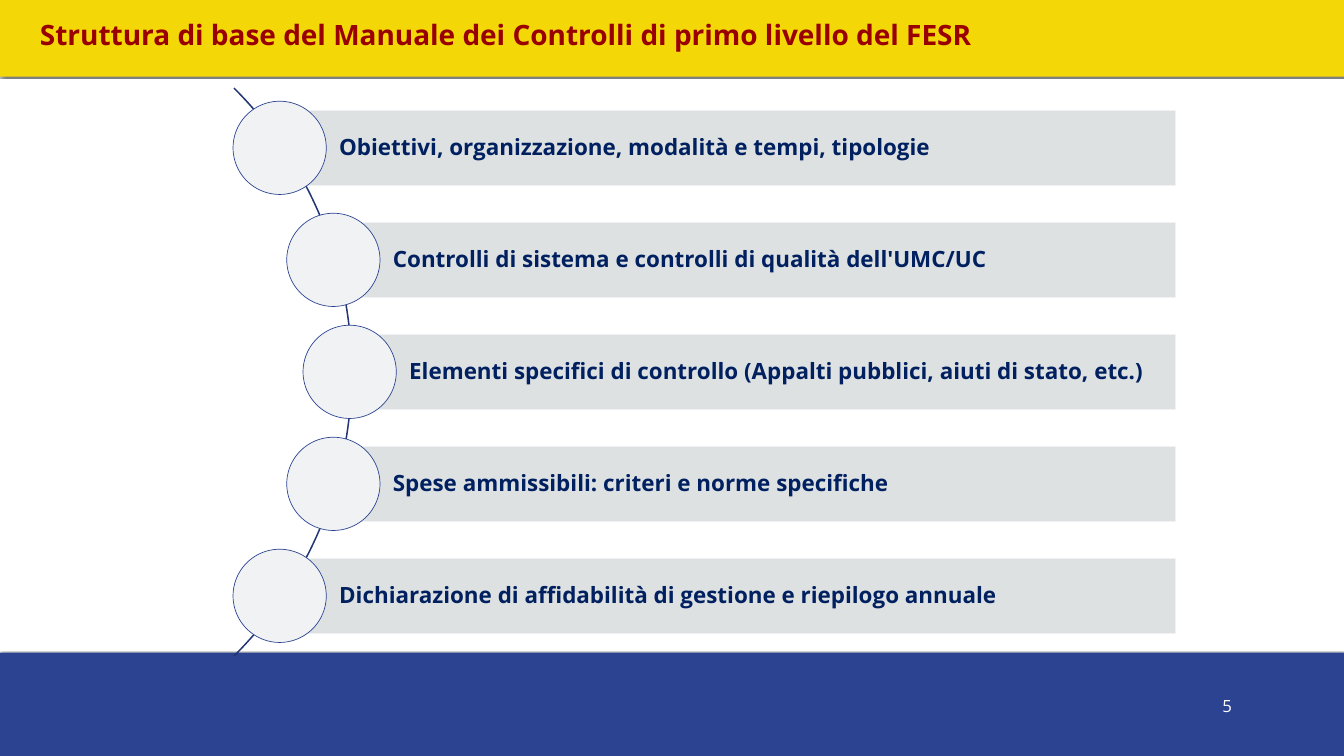
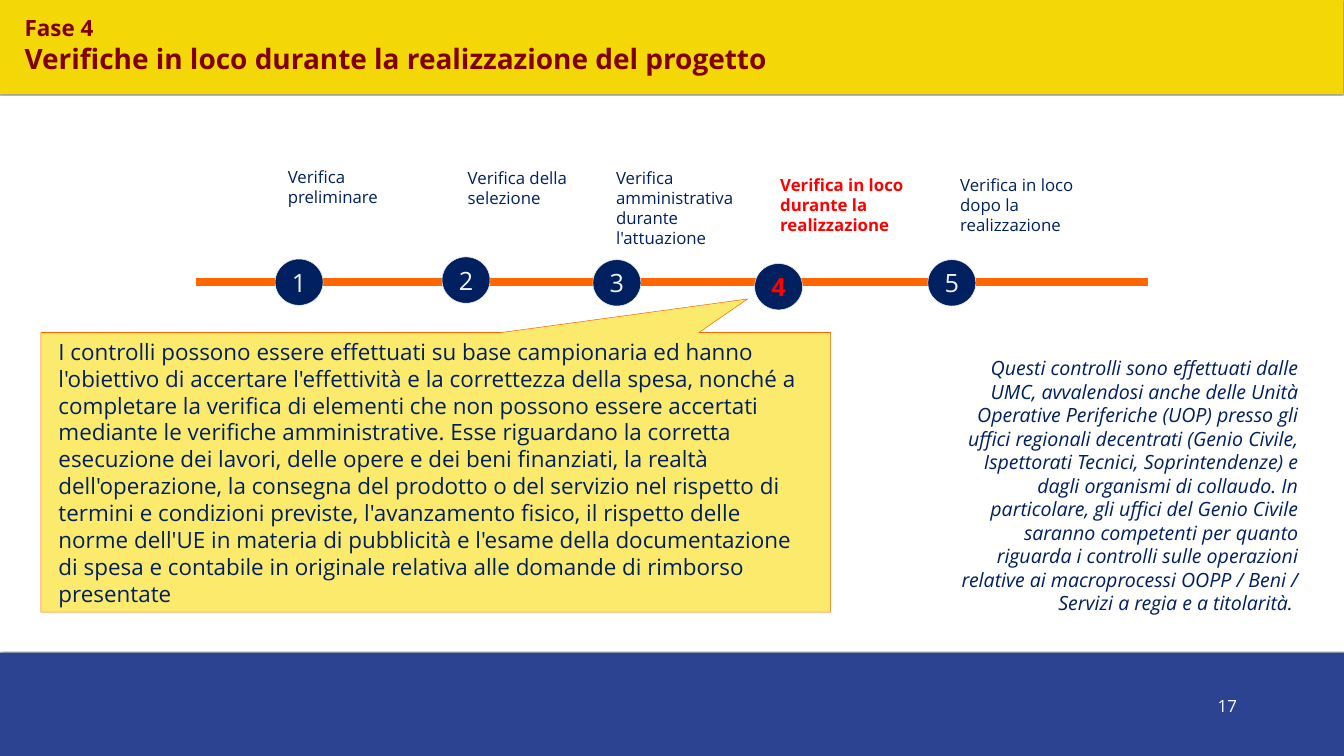
from math import sqrt

from lxml import etree
from pptx import Presentation
from pptx.dml.color import RGBColor
from pptx.enum import shapes, text
from pptx.oxml.ns import qn
from pptx.util import Pt

WIDTH, HEIGHT = 1920, 1080
FONT = "Open Sans"
NAVY, BLUE, YELLOW, PALE = "002060", "2B4390", "F3D707", "F0F2F4"
ORANGE, RED = "FF6600", "FF0000"
LEFT, CENTER, RIGHT = text.PP_ALIGN.LEFT, text.PP_ALIGN.CENTER, text.PP_ALIGN.RIGHT
TOP, MIDDLE = text.MSO_ANCHOR.TOP, text.MSO_ANCHOR.MIDDLE
SHAPE = shapes.MSO_SHAPE

TOPICS = [
    "Obiettivi, organizzazione, modalità e tempi, tipologie",
    "Controlli di sistema e controlli di qualità dell'UMC/UC",
    "Elementi specifici di controllo (Appalti pubblici, aiuti di stato, etc.)",
    "Spese ammissibili: criteri e norme specifiche",
    "Dichiarazione di affidabilità di gestione e riepilogo annuale",
]
PHASES = [
    ("Verifica preliminare", (393, 370), (404, 234, 181, 66)),
    ("Verifica della selezione", (631.5, 367), (661, 236, 181, 66)),
    ("Verifica amministrativa durante l'attuazione", (847, 371), (873, 235.5, 199.5, 124)),
    ("Verifica in loco durante la realizzazione", (1078, 376.5), (1107.5, 245.5, 222.5, 94)),
    ("Verifica in loco dopo la realizzazione", (1325.5, 371), (1364.5, 246, 199.5, 94)),
]
CURRENT_PHASE = 4
SAMPLE_CHECKS = (
    "I controlli possono essere effettuati su base campionaria ed hanno l'obiettivo di accertare "
    "l'effettività e la correttezza della spesa, nonché a completare la verifica di elementi che non "
    "possono essere accertati mediante le verifiche amministrative. Esse riguardano la corretta "
    "esecuzione dei lavori, delle opere e dei beni finanziati, la realtà dell'operazione, la consegna "
    "del prodotto o del servizio nel rispetto di termini e condizioni previste, l'avanzamento fisico, "
    "il rispetto delle norme dell'UE in materia di pubblicità e l'esame della documentazione di spesa "
    "e contabile in originale relativa alle domande di rimborso presentate"
)
RESPONSIBLE_UNITS = (
    "Questi controlli sono effettuati dalle UMC, avvalendosi anche delle Unità Operative Periferiche "
    "(UOP) presso gli uffici regionali decentrati (Genio Civile, Ispettorati Tecnici, Soprintendenze) "
    "e dagli organismi di collaudo. In particolare, gli uffici del Genio Civile saranno competenti per "
    "quanto riguarda i controlli sulle operazioni relative ai macroprocessi OOPP / Beni / Servizi a "
    "regia e a titolarità. "
)


def rgb(value):
    """Turn a hex string into a colour."""
    return RGBColor.from_string(value)


def write(shape, lines, size=32, color=NAVY, bold=False, italic=False, align=LEFT,
          anchor=MIDDLE, insets=(7.2, 3.6, 7.2, 3.6), wrap=True, spacing=None):
    """Write one string, or (string, size) lines of one paragraph, into a shape."""
    frame = shape.text_frame
    frame.word_wrap, frame.vertical_anchor = wrap, anchor
    frame.margin_left, frame.margin_top, frame.margin_right, frame.margin_bottom = map(Pt, insets)
    paragraph = frame.paragraphs[0]
    paragraph.alignment, paragraph.line_spacing = align, spacing
    if isinstance(lines, str):
        lines = [(lines, size)]
    for index, (words, line_size) in enumerate(lines):
        if index:
            paragraph.add_line_break()
        run = paragraph.add_run()
        run.text = words
        font = run.font
        font.name, font.size, font.bold, font.italic = FONT, Pt(line_size), bold, italic
        font.color.rgb = rgb(color)


class Deck:
    """Hold the shared style and the current slide."""

    def __init__(self):
        """Start an empty deck of the right size."""
        self.file = Presentation()
        self.file.slide_width, self.file.slide_height = Pt(WIDTH), Pt(HEIGHT)
        self.slide = None

    def new_slide(self, number):
        """Add a slide with its footer band and page number."""
        self.slide = self.file.slides.add_slide(self.file.slide_layouts[6])
        self.band(0, 932.4, 147.6, BLUE)
        self.label((1718, 991.5, 70.5, 38), str(number), size=24, color="FEFCFF",
                   align=CENTER, anchor=TOP, insets=(2.9,) * 4)

    def shape(self, kind, box, fill=None, line=None, line_width=1, adjust=()):
        """Add a preset shape."""
        item = self.slide.shapes.add_shape(kind, *map(Pt, box))
        item.shadow.inherit = False
        for index, value in enumerate(adjust):
            item.adjustments[index] = value
        if fill:
            item.fill.solid()
            item.fill.fore_color.rgb = rgb(fill)
        else:
            item.fill.background()
        if line:
            item.line.color.rgb = rgb(line)
            item.line.width = Pt(line_width)
        else:
            item.line.fill.background()
        return item

    def band(self, left, top, height, fill):
        """Add a full-width band with a soft shadow."""
        item = self.shape(SHAPE.RECTANGLE, (left, top, WIDTH, height), fill)
        effects = item._element.spPr.find(qn("a:effectLst"))
        shadow = etree.SubElement(effects, qn("a:outerShdw"), blurRad=str(Pt(2)), dist="0", dir="0")
        black = etree.SubElement(shadow, qn("a:srgbClr"), val="000000")
        etree.SubElement(black, qn("a:alpha"), val="50000")
        return item

    def label(self, box, lines, **style):
        """Add a text box."""
        write(self.slide.shapes.add_textbox(*map(Pt, box)), lines, **style)

    def line(self, start, end, color, width):
        """Add a straight line."""
        item = self.slide.shapes.add_connector(shapes.MSO_CONNECTOR.STRAIGHT, *map(Pt, start + end))
        item.line.color.rgb = rgb(color)
        item.line.width = Pt(width)
        etree.SubElement(item._element.spPr, qn("a:effectLst"))


def manual_structure(deck):
    """Build the list of topics along an arc."""
    deck.new_slide(5)
    title = deck.band(0, -11.5, 121, YELLOW)
    write(title, "Struttura di base del Manuale dei Controlli di primo livello del FESR",
          size=40, color="990000", bold=True, insets=(57, 0, 57, 0))
    deck.shape(SHAPE.BLOCK_ARC, (-645, -42.5, 1148, 1148), line="223673", adjust=(189, 27, 0.001))
    bar_right, bar_height, disc, pitch = 1679, 106.6, 133.2, 160
    arc_x, arc_y, radius = -62.5, 531.2, 562
    for row, topic in enumerate(TOPICS):
        rise = (row - len(TOPICS) // 2) * pitch
        x, y = arc_x + sqrt(radius ** 2 - rise ** 2), arc_y + rise
        bar = deck.shape(SHAPE.RECTANGLE, (x, y - bar_height / 2, bar_right - x, bar_height),
                         "DEE1E2", PALE)
        write(bar, topic, bold=True, insets=(85, 6.5, 6.5, 6.5), spacing=0.9)
        deck.shape(SHAPE.OVAL, (x - disc / 2, y - disc / 2, disc, disc), PALE, BLUE)


def on_site_checks(deck):
    """Build the timeline of phases with the fourth one explained."""
    deck.new_slide(17)
    deck.band(-1.5, 0, 134.6, YELLOW)
    deck.line((1639.5, 403), (279.5, 403), ORANGE, 12)
    checks = deck.shape(SHAPE.RECTANGULAR_CALLOUT, (58.5, 475, 1128, 399.5), "FBEA6C", ORANGE,
                        0.75, adjust=(0.395, -0.62))
    write(checks, SAMPLE_CHECKS, insets=(25, 24.5, 25, 24.5))
    deck.label((28, 11.5, 1275, 105),
               [("Fase 4", 32), ("Verifiche in loco durante la realizzazione del progetto", 40)],
               color="800000", bold=True)
    deck.label((1344, 503.5, 517.5, 380), RESPONSIBLE_UNITS, size=28, italic=True, align=RIGHT)
    for number, (phase, corner, label_box) in enumerate(PHASES, 1):
        current = number == CURRENT_PHASE
        marker = deck.shape(SHAPE.OVAL, corner + (68.5, 66.2), NAVY, PALE, 0.75)
        write(marker, str(number), size=36, color=RED if current else PALE, bold=current,
              align=CENTER, wrap=False)
        deck.label(label_box, phase, size=24, color=RED if current else NAVY, bold=current,
                   anchor=TOP)


def main():
    """Build and save the deck."""
    deck = Deck()
    manual_structure(deck)
    on_site_checks(deck)
    deck.file.save("out.pptx")


if __name__ == "__main__":
    main()
